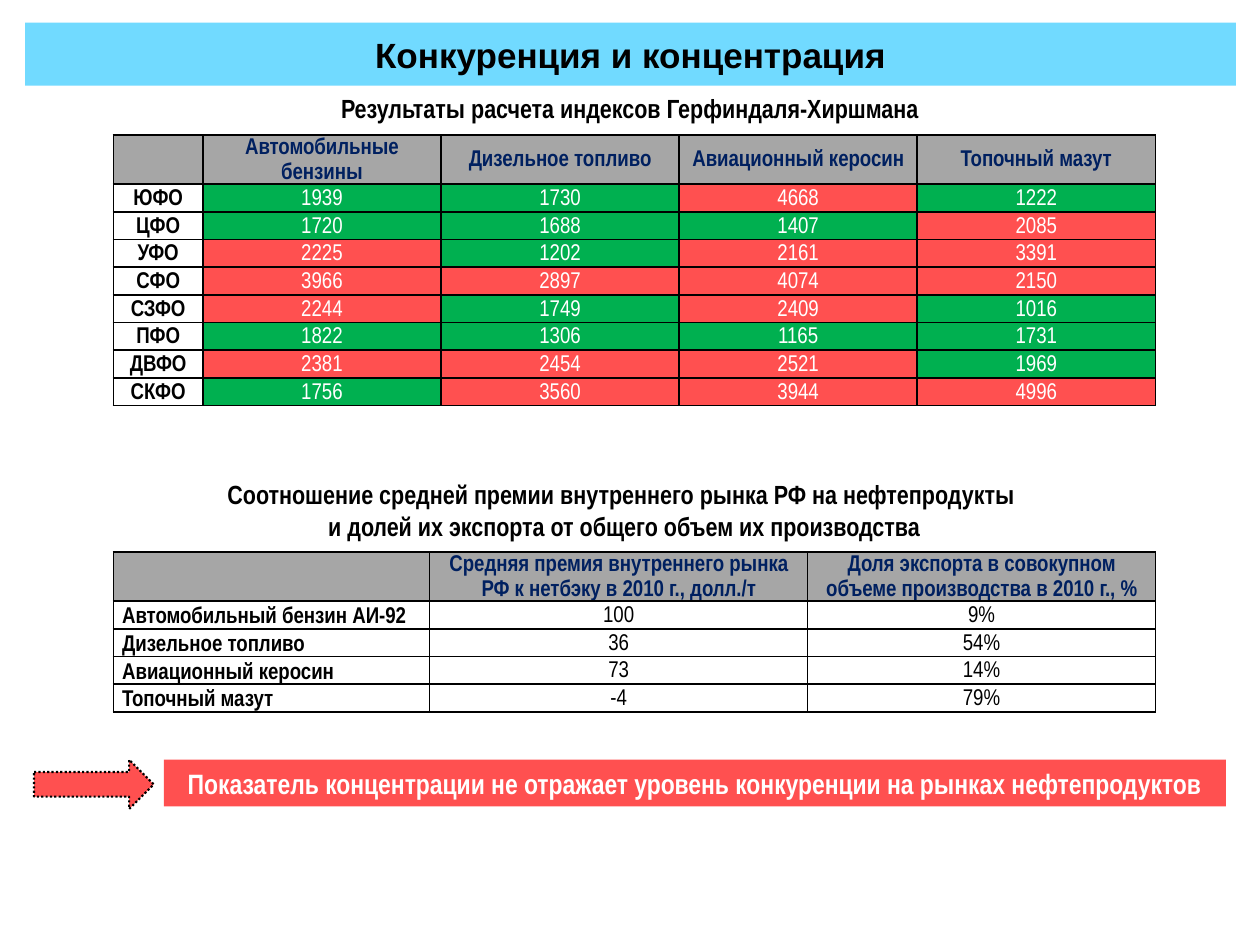
"""Build the slide on competition and concentration in oil product markets."""
from lxml.etree import SubElement
from pptx import Presentation
from pptx.dml.color import RGBColor
from pptx.enum.dml import MSO_LINE
from pptx.enum.shapes import MSO_SHAPE
from pptx.enum.text import MSO_ANCHOR, MSO_AUTO_SIZE, PP_ALIGN
from pptx.oxml.ns import qn
from pptx.util import Inches, Pt

TITLE = "Конкуренция и концентрация"
CAPTIONS = [
    ((2.56, 0.68, 4.88, 0.35), ["Результаты расчета индексов Герфиндаля-Хиршмана"]),
    ((0.35, 3.75, 9.21, 0.61), [
        "Соотношение средней премии внутреннего рынка РФ на нефтепродукты ",
        "и долей их экспорта от общего объем их производства"]),
]
CLAIM = "Показатель концентрации не отражает уровень конкуренции на рынках нефтепродуктов"
INDEX = [
    ["", "Автомобильные бензины", "Дизельное топливо", "Авиационный керосин", "Топочный мазут"],
    ["ЮФО", 1939, 1730, 4668, 1222],
    ["ЦФО", 1720, 1688, 1407, 2085],
    ["УФО", 2225, 1202, 2161, 3391],
    ["СФО", 3966, 2897, 4074, 2150],
    ["СЗФО", 2244, 1749, 2409, 1016],
    ["ПФО", 1822, 1306, 1165, 1731],
    ["ДВФО", 2381, 2454, 2521, 1969],
    ["СКФО", 1756, 3560, 3944, 4996],
]
EXPORT = [
    ["", "Средняя премия внутреннего рынка РФ к нетбэку в 2010 г., долл./т",
     "Доля экспорта в совокупном объеме производства в 2010 г., %"],
    ["Автомобильный бензин АИ-92", "100", "9%"],
    ["Дизельное топливо", "36", "54%"],
    ["Авиационный керосин", "73", "14%"],
    ["Топочный мазут", "-4", "79%"],
]
LIMIT = 2000
THEME = {
    "sky": "71DAFF", "gray": "A6A6A6", "navy": "002060", "green": "00B050",
    "red": "FF5050", "black": "000000", "white": "FFFFFF",
    "head": "Arial", "body": "Arial Narrow",
    "title": 20, "caption": 15, "cell": 13, "claim": 16,
}


def color(name):
    return RGBColor.from_string(THEME[name])


def paint(item, name):
    item.fill.solid()
    item.fill.fore_color.rgb = color(name)


def write(frame, lines, size, ink="black", bold=True, face="body", align=PP_ALIGN.CENTER):
    para = frame.paragraphs[0]
    para.alignment = align
    for i, line in enumerate(lines):
        if i:
            para.add_line_break()
        run = para.add_run()
        run.text = line
        font = run.font
        font.name, font.size, font.bold = THEME[face], Pt(THEME[size]), bold
        font.color.rgb = color(ink)
    return para


def border(cell):
    props = cell._tc.get_or_add_tcPr()
    for i, side in enumerate(("lnL", "lnR", "lnT", "lnB")):
        line = props.makeelement(qn("a:" + side), {"w": str(Pt(1))})
        props.insert(i, line)
        fill = SubElement(line, qn("a:solidFill"))
        SubElement(fill, qn("a:srgbClr"), val=THEME["black"])


def add_grid(slide, data, top, widths, heights, rated):
    frame = slide.shapes.add_table(
        len(data), len(widths), Inches(0.9), Inches(top),
        Inches(sum(widths)), Inches(sum(heights)))
    table = frame.table
    for col, width in zip(table.columns, widths):
        col.width = Inches(width)
    for row, height in zip(table.rows, heights):
        row.height = Inches(height)
    for r, row in enumerate(data):
        for c, value in enumerate(row):
            cell = table.cell(r, c)
            cell.margin_left = cell.margin_right = Inches(0.07)
            cell.margin_top = cell.margin_bottom = 0
            cell.vertical_anchor = MSO_ANCHOR.MIDDLE
            fill, ink, align = "white", "black", PP_ALIGN.CENTER
            if r == 0:
                fill, ink = "gray", "navy"
            elif c and rated:
                fill, ink = "red" if value > LIMIT else "green", "white"
            elif c == 0 and not rated:
                align = PP_ALIGN.LEFT
                cell.vertical_anchor = MSO_ANCHOR.BOTTOM
            paint(cell, fill)
            border(cell)
            para = write(cell.text_frame, [str(value)], "cell", ink, r == 0 or c == 0, align=align)
            para.line_spacing = 1.15


def add_block(slide, kind, box, fill):
    shape = slide.shapes.add_shape(kind, *map(Inches, box))
    shape.shadow.inherit = False
    paint(shape, fill)
    shape.line.fill.background()
    return shape


def main():
    deck = Presentation()
    deck.slide_width, deck.slide_height = Inches(10), Inches(7.5)
    slide = deck.slides.add_slide(deck.slide_layouts[5])

    title = slide.shapes.title
    title.left, title.top, title.width, title.height = map(Inches, (0.2, 0.18, 9.61, 0.5))
    paint(title, "sky")
    title.text_frame.vertical_anchor = MSO_ANCHOR.MIDDLE
    write(title.text_frame, [TITLE], "title", face="head")

    add_grid(slide, INDEX, 1.07, [0.71] + [1.89] * 4, [0.39] + [0.22] * 8, True)
    add_grid(slide, EXPORT, 4.38, [2.51, 3, 2.76], [0.39] + [0.22] * 4, False)

    for box, lines in CAPTIONS:
        frame = slide.shapes.add_textbox(*map(Inches, box)).text_frame
        frame.word_wrap = True
        frame.auto_size = MSO_AUTO_SIZE.SHAPE_TO_FIT_TEXT
        write(frame, lines, "caption")

    arrow = add_block(slide, MSO_SHAPE.RIGHT_ARROW, (0.27, 6.03, 0.95, 0.39), "red")
    arrow.line.color.rgb = color("black")
    arrow.line.width = Pt(1.25)
    arrow.line.dash_style = MSO_LINE.ROUND_DOT

    claim = add_block(slide, MSO_SHAPE.RECTANGLE, (1.3, 6.03, 8.43, 0.37), "red")
    claim.text_frame.word_wrap = True
    claim.text_frame.auto_size = MSO_AUTO_SIZE.SHAPE_TO_FIT_TEXT
    write(claim.text_frame, [CLAIM], "claim", "white")

    deck.save("out.pptx")


if __name__ == "__main__":
    main()
